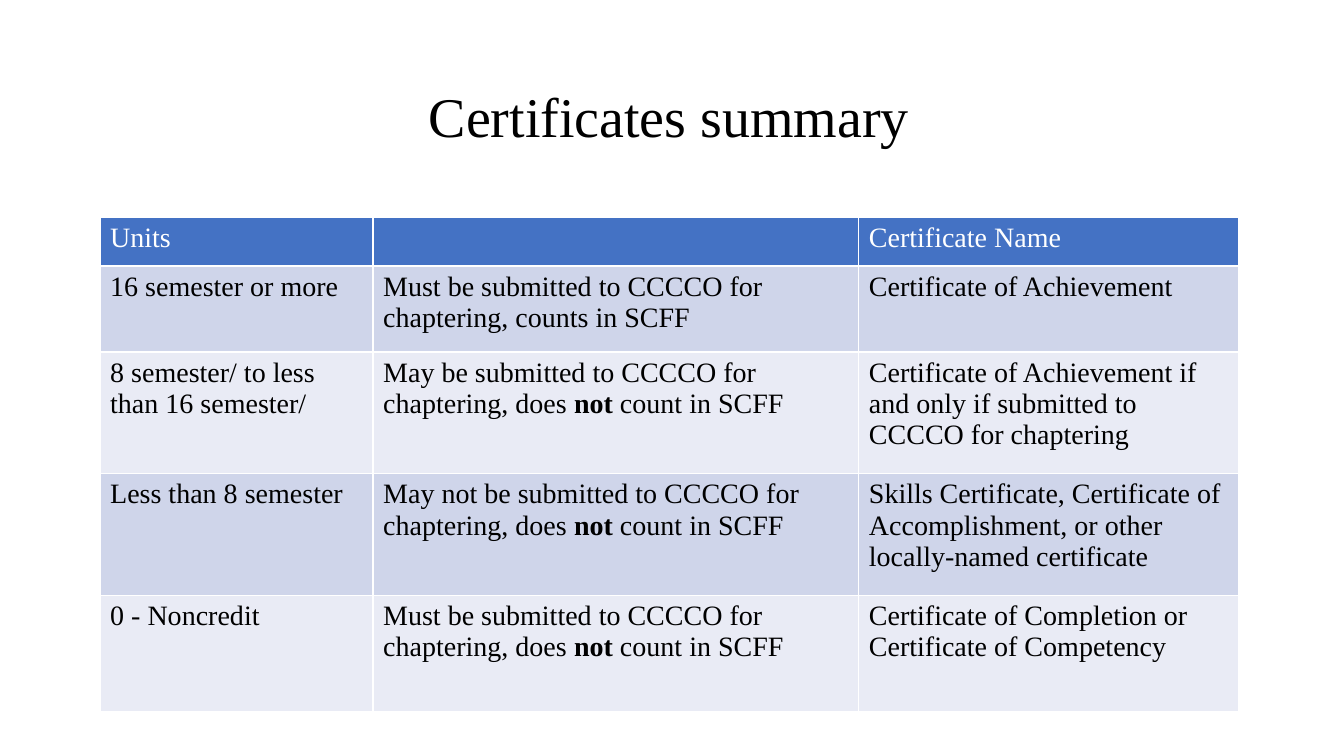
from pptx import Presentation
from pptx.dml.color import RGBColor
from pptx.enum import text
from pptx.util import Pt

BLACK = RGBColor(0x00, 0x00, 0x00)
WHITE = RGBColor(0xFF, 0xFF, 0xFF)
BLUE = RGBColor(0x44, 0x72, 0xC4)
DARK = RGBColor(0xCF, 0xD5, 0xEA)
LIGHT = RGBColor(0xE9, 0xEB, 0xF5)
FACE = "Times New Roman"

WIDTHS = [195, 347, 271.5]
HEIGHTS = [34.5, 61.5, 87, 87, 83]
ROWS = [
    ["Units", "", "Certificate Name"],
    ["16 semester or more",
     "Must be submitted to CCCCO for chaptering, counts in SCFF",
     "Certificate of Achievement"],
    ["8 semester/ to less than 16 semester/",
     "May be submitted to CCCCO for chaptering, does *not* count in SCFF",
     "Certificate of Achievement if and only if submitted to CCCCO for chaptering"],
    ["Less than 8 semester",
     "May not be submitted to CCCCO for chaptering, does *not* count in SCFF",
     "Skills Certificate, Certificate of Accomplishment, or other locally-named certificate"],
    ["0 - Noncredit",
     "Must be submitted to CCCCO for chaptering, does *not* count in SCFF",
     "Certificate of Completion or Certificate of Competency"],
]


def style(para, size, color):
    para.font.name = FACE
    para.font.size = Pt(size)
    para.font.color.rgb = color


deck = Presentation()
deck.slide_width, deck.slide_height = Pt(960), Pt(540)
slide = deck.slides.add_slide(deck.slide_layouts[6])

title = slide.shapes.add_textbox(Pt(173.5), Pt(38), Pt(608.5), Pt(94)).text_frame
title.word_wrap = True
title.vertical_anchor = text.MSO_ANCHOR.MIDDLE
para = title.paragraphs[0]
para.text = "Certificates summary"
para.alignment = text.PP_ALIGN.CENTER
para.line_spacing = 0.9
style(para, 40, BLACK)

table = slide.shapes.add_table(
    len(ROWS), len(WIDTHS), Pt(71.5), Pt(155.5), Pt(sum(WIDTHS)), Pt(sum(HEIGHTS))
).table
for col, width in zip(table.columns, WIDTHS):
    col.width = Pt(width)

for r, (row, height) in enumerate(zip(ROWS, HEIGHTS)):
    table.rows[r].height = Pt(height)
    fill = BLUE if r == 0 else DARK if r % 2 else LIGHT
    for c, words in enumerate(row):
        cell = table.cell(r, c)
        cell.fill.solid()
        cell.fill.fore_color.rgb = fill
        para = cell.text_frame.paragraphs[0]
        style(para, 20, BLACK if r else WHITE)
        if words:
            for i, part in enumerate(words.split("*")):
                run = para.add_run()
                run.text = part
                run.font.bold = i % 2 == 1

deck.save("out.pptx")
